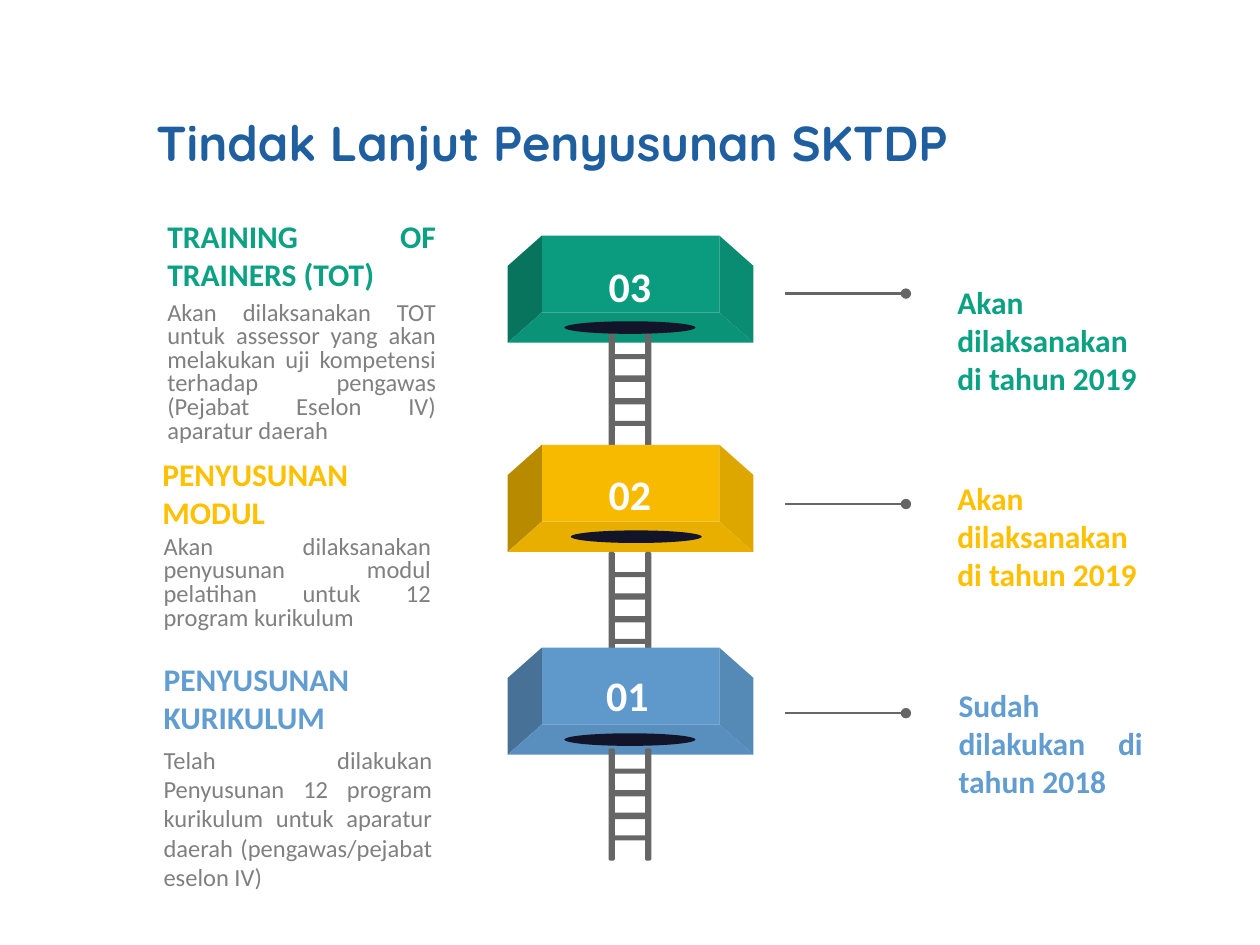
from lxml import etree
from pptx import Presentation
from pptx.dml.color import RGBColor
from pptx.enum.shapes import MSO_CONNECTOR, MSO_SHAPE
from pptx.enum.text import MSO_ANCHOR, MSO_AUTO_SIZE, PP_ALIGN
from pptx.oxml.ns import qn
from pptx.util import Inches, Pt

STRAIGHT = MSO_CONNECTOR.STRAIGHT
RECTANGLE, OVAL, TRAPEZOID = MSO_SHAPE.RECTANGLE, MSO_SHAPE.OVAL, MSO_SHAPE.TRAPEZOID
TOP, MIDDLE, BOTTOM = MSO_ANCHOR.TOP, MSO_ANCHOR.MIDDLE, MSO_ANCHOR.BOTTOM
LEFT, CENTER, JUSTIFY = PP_ALIGN.LEFT, PP_ALIGN.CENTER, PP_ALIGN.JUSTIFY
FIT_TEXT = MSO_AUTO_SIZE.SHAPE_TO_FIT_TEXT

GREEN, YELLOW, BLUE = "0BA183", "FFC000", "629DD1"
TITLE_BLUE, GRAY, DARK_GRAY, NAVY, WHITE = "1F5FA0", "808080", "666666", "121429", "FFFFFF"


def rgb(color):
    return RGBColor.from_string(color)


def shade(color, factor):
    """Darken a hex colour by a factor below one."""
    return "".join(f"{round(int(color[i:i + 2], 16) * factor):02X}" for i in (0, 2, 4))


def box_points(left, top, right, bottom):
    return [(left, top), (right, top), (right, bottom), (left, bottom)]


class SlideBuilder:
    def __init__(self, slide):
        self.slide = slide
        self.font = "Calibri"

    def text(self, box, content, size, color, bold=True, align=JUSTIFY, anchor=TOP,
             spacing=None, wrap=True, font=None):
        shape = self.slide.shapes.add_textbox(*map(Inches, box))
        frame = shape.text_frame
        frame.word_wrap = wrap
        frame.auto_size = FIT_TEXT
        frame.vertical_anchor = anchor
        paragraph = frame.paragraphs[0]
        paragraph.text = content
        paragraph.alignment = align
        if spacing:
            paragraph.line_spacing = Pt(spacing)
        paragraph.font.name = font or self.font
        paragraph.font.size = Pt(size)
        paragraph.font.bold = bold
        paragraph.font.color.rgb = rgb(color)

    def paint(self, shape, color):
        shape.shadow.inherit = False
        shape.fill.solid()
        shape.fill.fore_color.rgb = rgb(color)
        shape.line.fill.background()

    def shape(self, kind, box, color):
        shape = self.slide.shapes.add_shape(kind, *map(Inches, box))
        self.paint(shape, color)
        return shape

    def outline(self, contours, color):
        """Draw closed contours as one shape; inner contours become holes."""
        contours = [[(Inches(x), Inches(y)) for x, y in points] for points in contours]
        builder = self.slide.shapes.build_freeform(*contours[0][0])
        for index, points in enumerate(contours):
            if index:
                builder.move_to(*points[0])
            builder.add_line_segments(points[1:], close=True)
        self.paint(builder.convert_to_shape(), color)

    def block(self, top, color):
        left, right, bevel, front_height, height = 4.03, 5.98, 0.27, 0.61, 0.85
        base = top + front_height
        self.shape(RECTANGLE, (left + bevel, top, right - left - 2 * bevel, front_height),
                   shade(color, 0.97))
        for outer, inner, factor in ((left, left + bevel, 0.72), (right, right - bevel, 0.87)):
            side = [(inner, top), (outer, top + 0.24), (outer, top + height), (inner, base)]
            self.outline([side], shade(color, factor))
        floor = self.shape(TRAPEZOID, (left, base, right - left, height - front_height),
                           shade(color, 0.91))
        floor.adjustments[0] = bevel / (height - front_height)

    def ladder(self, top):
        left, right, rail, height, cap = 4.83, 5.17, 0.05, 0.89, 0.01
        inner_left, inner_right, bottom = left + rail, right - rail, top + height
        frame = [
            (left, top + cap), (left + cap, top), (inner_left - cap, top),
            (inner_left, top + cap), (inner_left, top + 0.16), (inner_right, top + 0.16),
            (inner_right, top + cap), (inner_right + cap, top), (right - cap, top),
            (right, top + cap), (right, bottom - cap), (right - cap, bottom),
            (inner_right + cap, bottom), (inner_right, bottom - cap),
            (inner_right, top + 0.73), (inner_left, top + 0.73),
            (inner_left, bottom - cap), (inner_left - cap, bottom),
            (left + cap, bottom), (left, bottom - cap)]
        gaps = [box_points(inner_left, y, inner_right, y + 0.13)
                for y in (top + 0.2 + 0.18 * step for step in range(3))]
        self.outline([frame] + gaps, DARK_GRAY)

    def pointer(self, y):
        line = self.slide.shapes.add_connector(
            STRAIGHT, Inches(7.19), Inches(y), Inches(6.23), Inches(y))
        line.line.color.rgb = rgb(DARK_GRAY)
        line.line.width = Pt(1.5)
        etree.SubElement(line.line._get_or_add_ln(), qn("a:headEnd"), type="oval")
        etree.SubElement(line._element.spPr, qn("a:effectLst"))


def main():
    presentation = Presentation()
    presentation.slide_width, presentation.slide_height = Inches(10), Inches(7.5)
    builder = SlideBuilder(presentation.slides.add_slide(presentation.slide_layouts[6]))
    builder.text((1.14, 0.84, 7.72, 0.57), "Tindak Lanjut Penyusunan SKTDP", 28, TITLE_BLUE,
                 align=LEFT, font="Quicksand")

    # number, colour, block top, hole left, ladder top, number position, pointer y
    steps = [
        ("03", GREEN, 1.87, 4.48, 2.65, (4.73, 2.02), 2.33),
        ("02", YELLOW, 3.53, 4.53, 4.38, (4.73, 3.67), 4.0),
        ("01", BLUE, 5.14, 4.48, 5.94, (4.71, 5.26), 5.66),
    ]
    for number, color, top, hole_left, ladder_top, position, pointer_y in steps:
        builder.block(top, color)
        builder.shape(OVAL, (hole_left, top + 0.68, 1.04, 0.1), NAVY)
        builder.ladder(ladder_top)
        builder.text((*position, 0.54, 0.5), number, 24, WHITE,
                     align=CENTER, anchor=MIDDLE, wrap=False)
        builder.pointer(pointer_y)

    # colour, heading and its box, description with its box and line spacing
    details = [
        (GREEN, "TRAINING OF TRAINERS (TOT)", (1.23, 1.66, 2.33, 0.71),
         "Akan dilaksanakan TOT untuk assessor yang akan melakukan uji kompetensi "
         "terhadap pengawas (Pejabat Eselon IV) aparatur daerah",
         (1.23, 2.35, 2.33, 1.28), 13.5),
        (YELLOW, "PENYUSUNAN MODUL", (1.19, 3.55, 2.42, 0.71),
         "Akan dilaksanakan penyusunan modul pelatihan untuk 12 program kurikulum",
         (1.2, 4.21, 2.32, 0.89), 13.5),
        (BLUE, "PENYUSUNAN KURIKULUM", (1.2, 5.18, 2.33, 0.71),
         "Telah dilakukan Penyusunan 12 program kurikulum untuk aparatur daerah "
         "(pengawas/pejabat eselon IV)",
         (1.2, 5.86, 2.33, 1.28), None),
    ]
    for color, heading, heading_box, description, description_box, spacing in details:
        builder.text(heading_box, heading, 18, color, anchor=BOTTOM)
        builder.text(description_box, description, 14, GRAY, bold=False, spacing=spacing)

    schedule = [
        (GREEN, "Akan dilaksanakan di tahun 2019", (7.5, 2.19, 1.67, 1.01)),
        (YELLOW, "Akan dilaksanakan di tahun 2019", (7.5, 3.75, 1.67, 1.01)),
        (BLUE, "Sudah dilakukan di tahun 2018", (7.51, 5.39, 1.66, 1.01)),
    ]
    for color, status, box in schedule:
        builder.text(box, status, 18, color, anchor=MIDDLE)

    presentation.save("out.pptx")


if __name__ == "__main__":
    main()
